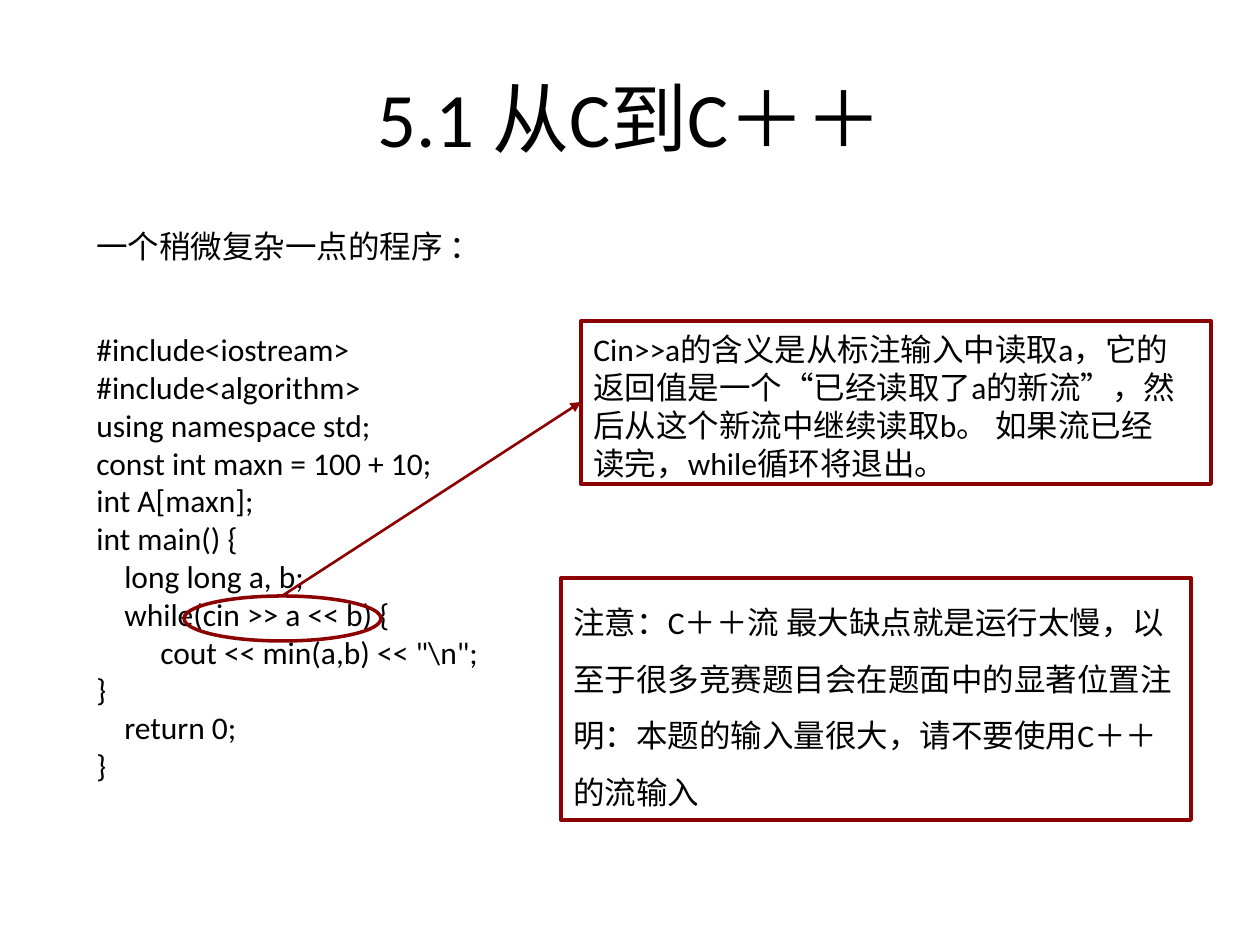
from pptx import Presentation
from pptx.dml.color import RGBColor
from pptx.enum.shapes import MSO_CONNECTOR, MSO_SHAPE
from pptx.enum.text import MSO_ANCHOR, PP_ALIGN
from pptx.oxml.ns import qn
from pptx.util import Emu, Pt
from lxml.etree import SubElement

BLACK = RGBColor(0x00, 0x00, 0x00)
DARK_RED = RGBColor(0x8C, 0x02, 0x02)
FONT = "Calibri"
PX_PER_INCH = 126

CODE = [
    (0, "#include<iostream>"),
    (0, "#include<algorithm>"),
    (0, "using namespace std;"),
    (0, "const int maxn = 100 + 10;"),
    (0, "int A[maxn];"),
    (0, "int main() {"),
    (28, "long long a, b;"),
    (28, "while(cin >> a << b) {"),
    (64, 'cout << min(a,b) << "\\n";'),
    (0, "}"),
    (28, "return 0;"),
    (0, "}"),
]
INTRO = "一个稍微复杂一点的程序 ："
MEANING = ("Cin>>a的含义是从标注输入中读取a，它的返回值是一个“已经读取了a的新流”，"
           "然后从这个新流中继续读取b。 如果流已经读完，while循环将退出。")
WARNING = ("注意：C＋＋流 最大缺点就是运行太慢，以至于很多竞赛题目会在题面中的显著位置注明："
           "本题的输入量很大，请不要使用C＋＋的流输入")


def px(*values):
    return [Emu(round(v * 914400 / PX_PER_INCH)) for v in values]


class Builder:
    """Holds the style and the current slide, and adds elements to it."""

    def __init__(self, s, font=FONT, size=18, color=BLACK, accent=DARK_RED):
        self.s, self.font, self.size = s, font, size
        self.color, self.accent = color, accent

    def fill_text(self, tf, lines, size=None, align=PP_ALIGN.LEFT, spacing=None):
        tf.word_wrap = True
        tf.text = "\n".join(text for _, text in lines)
        for p, (indent, _) in zip(tf.paragraphs, lines):
            p.alignment = align
            if spacing:
                p.line_spacing = spacing
            if indent:
                p._p.get_or_add_pPr().set("marL", str(px(indent)[0]))
            for r in p.runs:
                r.font.name, r.font.size = self.font, Pt(size or self.size)
                r.font.color.rgb = self.color

    def title(self, text, *box):
        sp = self.s.shapes.title
        sp.left, sp.top, sp.width, sp.height = px(*box)
        sp.text_frame.vertical_anchor = MSO_ANCHOR.MIDDLE
        self.fill_text(sp.text_frame, [(0, text)], 44, PP_ALIGN.CENTER)

    def text(self, lines, *box):
        sp = self.s.shapes.add_textbox(*px(*box))
        self.fill_text(sp.text_frame, lines)

    def outline(self, kind, width, *box):
        sp = self.s.shapes.add_shape(kind, *px(*box))
        sp.shadow.inherit = False
        sp.fill.background()
        sp.line.color.rgb, sp.line.width = self.accent, Pt(width)
        return sp

    def note(self, text, spacing, *box):
        tf = self.outline(MSO_SHAPE.RECTANGLE, 2.25, *box).text_frame
        tf.vertical_anchor = MSO_ANCHOR.TOP
        self.fill_text(tf, [(0, text)], spacing=spacing)

    def arrow(self, *ends):
        c = self.s.shapes.add_connector(MSO_CONNECTOR.STRAIGHT, *px(*ends))
        c.line.color.rgb, c.line.width = self.accent, Pt(1.5)
        SubElement(c.line._get_or_add_ln(), qn("a:tailEnd"), type="triangle")
        SubElement(c._element.spPr, qn("a:effectLst"))


def main():
    prs = Presentation()
    prs.slide_width, prs.slide_height = px(1260, 945)
    b = Builder(prs.slides.add_slide(prs.slide_layouts[5]))
    b.title("5.1 从C到C＋＋", 63, 38, 1134, 157)
    b.text(CODE, 84, 324, 630, 509)
    b.text([(0, INTRO)], 84, 221, 552, 50)
    b.text([(0, MEANING)], 581, 324, 610, 204)
    b.outline(MSO_SHAPE.OVAL, 2, 184, 596, 197, 45)
    b.arrow(282, 596, 581, 402)
    b.outline(MSO_SHAPE.RECTANGLE, 2.25, 581, 321, 630, 163)
    b.note(WARNING, 1.5, 561, 578, 630, 242)
    prs.save("out.pptx")


if __name__ == "__main__":
    main()
